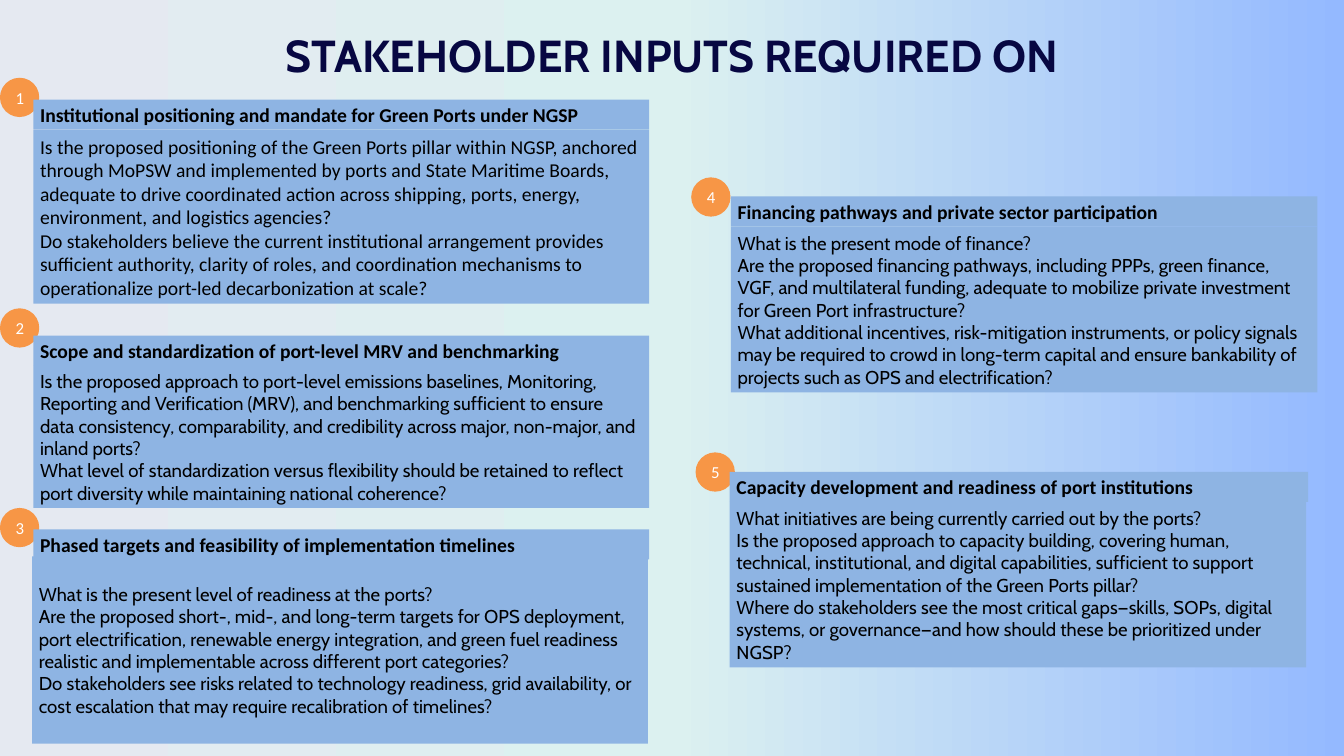
import pptx
import pptx.util
import pptx.dml.color
import pptx.enum.shapes
import pptx.enum.text
import pptx.oxml
import pptx.oxml.ns
from pptx.util import Cm

COLORS = {
    "title": "070742",
    "panel": "8EB4E3",
    "badge": "F79646",
    "text": "000000",
    "badge_text": "FFFFFF",
}
BACKGROUND_STOPS = [(0, "E5E9F1"), (50, "DCF1F0"), (100, "94B9FF")]
HEADING_HEIGHT = 0.76
BADGE_SIZE = 0.99

# Boxes are (left, top, width[, height]) in centimetres
TOPICS = [
    {
        "heading": "Institutional positioning and mandate for Green Ports under NGSP",
        "badge": (0, 1.96), "head": (0.84, 2.51, 15.52), "body": (0.84, 3.28, 15.52, 4.37),
        "font": ("Calibri", 14),
        "questions": [
            "Is the proposed positioning of the Green Ports pillar within NGSP, anchored through "
            "MoPSW and implemented by ports and State Maritime Boards, adequate to drive coordinated "
            "action across shipping, ports, energy, environment, and logistics agencies?\n"
            "Do stakeholders believe the current institutional arrangement provides sufficient "
            "authority, clarity of roles, and coordination mechanisms to operationalize port-led "
            "decarbonization at scale?",
        ],
    },
    {
        "heading": "Scope and standardization of port-level MRV and benchmarking",
        "badge": (0, 7.77), "head": (0.84, 8.46, 15.52), "body": (0.84, 9.22, 15.52, 3.58),
        "font": ("Cabin", 13.3),
        "questions": [
            "Is the proposed approach to port-level emissions baselines, Monitoring, Reporting and "
            "Verification (MRV), and benchmarking sufficient to ensure data consistency, "
            "comparability, and credibility across major, non-major, and inland ports?",
            "What level of standardization versus flexibility should be retained to reflect port "
            "diversity while maintaining national coherence?",
        ],
    },
    {
        "heading": "Phased targets and feasibility of implementation timelines",
        "badge": (0, 12.8), "head": (0.84, 13.34, 15.52), "body": (0.81, 14.02, 15.52, 4.72),
        "font": ("Cabin", 13.3),
        "questions": [
            "What is the present level of readiness at the ports?",
            "Are the proposed short-, mid-, and long-term targets for OPS deployment, port "
            "electrification, renewable energy integration, and green fuel readiness realistic and "
            "implementable across different port categories?",
            "Do stakeholders see risks related to technology readiness, grid availability, or cost "
            "escalation that may require recalibration of timelines?",
        ],
    },
    {
        "heading": "Financing pathways and private sector participation",
        "badge": (17.42, 4.47), "head": (18.42, 4.95, 14.78), "body": (18.42, 5.72, 14.78, 4.17),
        "font": ("Cabin", 13.3),
        "questions": [
            "What is the present mode of finance?",
            "Are the proposed financing pathways, including PPPs, green finance, VGF, and "
            "multilateral funding, adequate to mobilize private investment for Green Port "
            "infrastructure?",
            "What additional incentives, risk-mitigation instruments, or policy signals may be "
            "required to crowd in long-term capital and ensure bankability of projects such as OPS "
            "and electrification?",
        ],
    },
    {
        "heading": "Capacity development and readiness of port institutions",
        "badge": (17.53, 11.4), "head": (18.39, 11.89, 14.58), "body": (18.39, 12.65, 14.53, 4.17),
        "font": ("Cabin", 13.3),
        "questions": [
            "What initiatives are being currently carried out by the ports?",
            "Is the proposed approach to capacity building, covering human, technical, "
            "institutional, and digital capabilities, sufficient to support sustained "
            "implementation of the Green Ports pillar?",
            "Where do stakeholders see the most critical gaps—skills, SOPs, digital systems, or "
            "governance—and how should these be prioritized under NGSP?",
        ],
    },
]


def rgb(name):
    return pptx.dml.color.RGBColor.from_string(COLORS[name])


def set_font(p, name, size, color, bold=False):
    p.font.name = name
    p.font.size = pptx.util.Pt(size)
    p.font.bold = bold
    p.font.color.rgb = rgb(color)


def set_background(s):
    fill = s.background.fill
    fill.gradient()
    fill.gradient_angle = 0
    # Three stops need XML: the default gradient has two
    stops = s.background._cSld.find(".//" + pptx.oxml.ns.qn("a:gsLst"))
    for stop in list(stops):
        stops.remove(stop)
    for percent, color in BACKGROUND_STOPS:
        stops.append(pptx.oxml.parse_xml(
            f'<a:gs {pptx.oxml.ns.nsdecls("a")} pos="{percent * 1000}">'
            f'<a:srgbClr val="{color}"/></a:gs>'))


def set_title(s, text):
    title = s.shapes.title
    title.left, title.top, title.width, title.height = Cm(6.3), Cm(0.69), Cm(21.29), Cm(1.55)
    tf = title.text_frame
    tf.word_wrap = True
    tf.auto_size = pptx.enum.text.MSO_AUTO_SIZE.SHAPE_TO_FIT_TEXT
    tf.vertical_anchor = pptx.enum.text.MSO_ANCHOR.TOP
    p = tf.paragraphs[0]
    p.text = text
    p.alignment = pptx.enum.text.PP_ALIGN.CENTER
    p.line_spacing = pptx.util.Pt(35.2)
    set_font(p, "Cabin", 32, "title", bold=True)


def add_filled(shapes, kind, box, color):
    sp = shapes.add_shape(kind, *[Cm(v) for v in box])
    sp.shadow.inherit = False
    sp.fill.solid()
    sp.fill.fore_color.rgb = rgb(color)
    sp.line.fill.background()
    sp.text_frame.vertical_anchor = pptx.enum.text.MSO_ANCHOR.MIDDLE
    return sp


def add_panel(shapes, box, texts, font, size, bold=False):
    sp = add_filled(shapes, pptx.enum.shapes.MSO_SHAPE.RECTANGLE, box, "panel")
    tf = sp.text_frame
    tf.word_wrap = True
    tf.auto_size = pptx.enum.text.MSO_AUTO_SIZE.SHAPE_TO_FIT_TEXT
    tf.margin_left = tf.margin_right = Cm(0.17)
    tf.margin_top = tf.margin_bottom = Cm(0.08)
    for i, text in enumerate(texts):
        p = tf.add_paragraph() if i else tf.paragraphs[0]
        p.text = text
        p.alignment = pptx.enum.text.PP_ALIGN.LEFT
        set_font(p, font, size, "text", bold)


def add_badge(shapes, corner, number):
    box = (*corner, BADGE_SIZE, BADGE_SIZE)
    sp = add_filled(shapes, pptx.enum.shapes.MSO_SHAPE.OVAL, box, "badge")
    p = sp.text_frame.paragraphs[0]
    p.text = str(number)
    p.alignment = pptx.enum.text.PP_ALIGN.CENTER
    set_font(p, "Calibri", 12, "badge_text")


def add_topic(s, number, topic):
    shapes = s.shapes.add_group_shape().shapes
    add_panel(shapes, topic["body"], topic["questions"], *topic["font"])
    add_badge(shapes, topic["badge"], number)
    add_panel(shapes, (*topic["head"], HEADING_HEIGHT), [topic["heading"]], "Calibri", 14, bold=True)


def main():
    prs = pptx.Presentation()
    prs.slide_width, prs.slide_height = Cm(33.87), Cm(19.05)
    s = prs.slides.add_slide(prs.slide_layouts.get_by_name("Title Only"))

    # Background and title
    set_background(s)
    set_title(s, "STAKEHOLDER INPUTS REQUIRED ON")

    # Numbered topics
    for number, topic in enumerate(TOPICS, start=1):
        add_topic(s, number, topic)

    prs.save("out.pptx")


if __name__ == "__main__":
    main()
